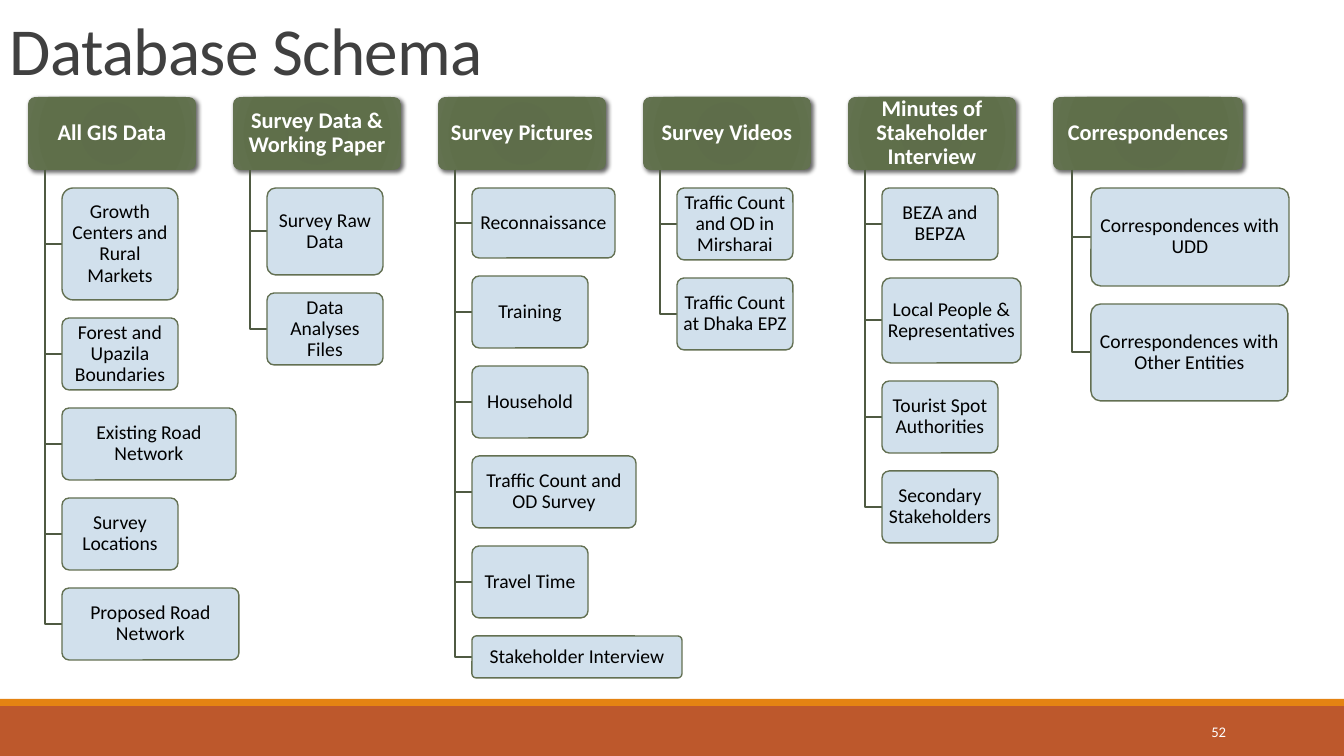
from dataclasses import dataclass

from lxml import etree
from pptx import Presentation
from pptx import util as u
from pptx.dml.color import RGBColor
from pptx.enum import shapes, text
from pptx.oxml import parse_xml
from pptx.oxml.ns import nsdecls, qn

PX = 914400 / 100.8  # EMU in one px
SLIDE_W, SLIDE_H = 1344, 756


@dataclass(frozen=True)
class Theme:
    font: str = "Calibri"
    title: str = "404040"
    light: str = "FFFFFF"
    dark: str = "000000"
    band: str = "BD582C"
    stripe: str = "E48312"
    branch: str = "4F5A42"
    entry: str = "CCDDEA"
    entry_edge: str = "637052"
    header_stops: tuple = ((0, "5D6D48"), (34, "5E6D4A"), (70, "5F6F4A"), (100, "637250"))
    title_size: float = 48
    header_size: float = 16
    entry_size: float = 14
    number_size: float = 10.5


THEME = Theme()

# Schema columns: header, header width, entries as (label, width, height)
HEADER_W, ENTRY_W, ENTRY_H = 168, 116, 72
SCHEMA = [
    ("All GIS Data", HEADER_W, [
        ("Growth Centers and Rural Markets", ENTRY_W, 112),
        ("Forest and Upazila Boundaries", ENTRY_W, ENTRY_H),
        ("Existing Road Network", 174, ENTRY_H),
        ("Survey Locations", ENTRY_W, ENTRY_H),
        ("Proposed Road Network", 177, ENTRY_H)]),
    ("Survey Data & Working Paper", HEADER_W, [
        ("Survey Raw Data", ENTRY_W, 87),
        ("Data Analyses Files", ENTRY_W, ENTRY_H)]),
    ("Survey Pictures", HEADER_W, [
        ("Reconnaissance", 143, 70),
        ("Training", ENTRY_W, ENTRY_H),
        ("Household", ENTRY_W, ENTRY_H),
        ("Traffic Count and OD Survey", 164, ENTRY_H),
        ("Travel Time", ENTRY_W, ENTRY_H),
        ("Stakeholder Interview", 210, 42)]),
    ("Survey Videos", HEADER_W, [
        ("Traffic Count and OD in Mirsharai", ENTRY_W, ENTRY_H),
        ("Traffic Count at Dhaka EPZ", ENTRY_W, ENTRY_H)]),
    ("Minutes of Stakeholder Interview", HEADER_W, [
        ("BEZA and BEPZA", ENTRY_W, ENTRY_H),
        ("Local People & Representatives", 139, 85),
        ("Tourist Spot Authorities", ENTRY_W, ENTRY_H),
        ("Secondary Stakeholders", ENTRY_W, ENTRY_H)]),
    ("Correspondences", 190, [
        ("Correspondences with UDD", 198, 98),
        ("Correspondences with Other Entities", 197, 97)]),
]


def emu(*lengths):
    return [u.Emu(round(n * PX)) for n in lengths]


def rgb(code):
    return RGBColor.from_string(code)


def write(frame, words, size, color, align, anchor, spacing=1.0, bold=False):
    frame.word_wrap = True
    frame.vertical_anchor = anchor
    line = frame.paragraphs[0]
    line.text = words
    line.alignment = align
    line.line_spacing = spacing
    line.font.name = THEME.font
    line.font.size = u.Pt(size)
    line.font.bold = bold
    line.font.color.rgb = rgb(color)
    return line


def add_bar(slide, x, y, w, h, color):
    bar = slide.shapes.add_shape(shapes.MSO_SHAPE.RECTANGLE, *emu(x, y, w, h))
    bar.shadow.inherit = False
    bar.fill.solid()
    bar.fill.fore_color.rgb = rgb(color)
    bar.line.fill.background()


def add_node(slide, x, y, w, h, label, size, color, bold=False):
    node = slide.shapes.add_shape(shapes.MSO_SHAPE.ROUNDED_RECTANGLE, *emu(x, y, w, h))
    node.adjustments[0] = 0.1
    node.shadow.inherit = False
    frame = node.text_frame
    frame.margin_left, frame.margin_right, frame.margin_top, frame.margin_bottom = emu(3, 3, 2, 2)
    write(frame, label, size, color, text.PP_ALIGN.CENTER, text.MSO_ANCHOR.MIDDLE, 0.9, bold)
    return node


def add_header(slide, x, y, w, h, label):
    header = add_node(slide, x, y, w, h, label, THEME.header_size, THEME.light, True)
    header.line.fill.background()
    header.fill.background()
    properties = header._element.spPr
    # Radial gradient
    stops = "".join(f'<a:gs pos="{at * 1000}"><a:srgbClr val="{code}"/></a:gs>'
                    for at, code in THEME.header_stops)
    gradient = parse_xml(
        f'<a:gradFill {nsdecls("a")} rotWithShape="1"><a:gsLst>{stops}</a:gsLst><a:path path="circle">'
        '<a:fillToRect l="100000" t="100000" r="100000" b="100000"/></a:path></a:gradFill>')
    properties.replace(properties.find(qn("a:noFill")), gradient)
    # Drop shadow towards the lower right
    properties.find(qn("a:effectLst")).append(parse_xml(
        f'<a:outerShdw {nsdecls("a")} blurRad="38100" dist="25400" dir="2700000" rotWithShape="0">'
        '<a:srgbClr val="000000"><a:alpha val="60000"/></a:srgbClr></a:outerShdw>'))


def add_entry(slide, x, y, w, h, label):
    entry = add_node(slide, x, y, w, h, label, THEME.entry_size, THEME.dark)
    entry.fill.solid()
    entry.fill.fore_color.rgb = rgb(THEME.entry)
    tint = entry._element.spPr.find(qn("a:solidFill")).find(qn("a:srgbClr"))
    etree.SubElement(tint, qn("a:alpha")).set("val", "90000")
    entry.line.color.rgb = rgb(THEME.entry_edge)
    entry.line.width = u.Pt(1)


def add_branch(slide, trunk_x, top, entry_x, middle):
    outline = slide.shapes.build_freeform(trunk_x, top, scale=PX)
    outline.add_line_segments([(trunk_x, middle), (entry_x, middle)], close=False)
    branch = outline.convert_to_shape()
    branch.shadow.inherit = False
    branch.fill.background()
    branch.line.color.rgb = rgb(THEME.branch)
    branch.line.width = u.Pt(1)


def add_column(slide, x, y, w, h, label, entries, gap=18):
    add_header(slide, x, y, w, h, label)
    trunk_x, entry_x = x + round(w / 10), x + round(w / 5)
    entry_y = y + h + gap
    for entry, entry_w, entry_h in entries:
        add_branch(slide, trunk_x, y + h, entry_x, entry_y + entry_h // 2)
        add_entry(slide, entry_x, entry_y, entry_w, entry_h, entry)
        entry_y += entry_h + gap


def add_schema(slide, x, y, pitch=205, header_h=73):
    for index, (label, width, entries) in enumerate(SCHEMA):
        add_column(slide, x + index * pitch, y, width, header_h, label, entries)


def add_title(slide, x, y, w, h):
    title = slide.shapes.add_textbox(*emu(x, y, w, h))
    line = write(title.text_frame, "Database Schema", THEME.title_size, THEME.title,
                 text.PP_ALIGN.LEFT, text.MSO_ANCHOR.BOTTOM, 0.85)
    line.runs[0].font._element.set("spc", "-50")


def add_footer(slide, x, y, w, h):
    stripe_h = 7
    add_bar(slide, x, y + stripe_h, w, h - stripe_h, THEME.band)
    add_bar(slide, x, y, w, stripe_h, THEME.stripe)
    number = slide.shapes.add_textbox(*emu(x + 1092, y + 13, 144, 40))
    write(number.text_frame, "52", THEME.number_size, THEME.light,
          text.PP_ALIGN.RIGHT, text.MSO_ANCHOR.MIDDLE)


def main():
    deck = Presentation()
    deck.slide_width, deck.slide_height = emu(SLIDE_W, SLIDE_H)
    slide = deck.slides.add_slide(deck.slide_layouts[6])
    add_footer(slide, 0, 699, SLIDE_W, SLIDE_H - 699)
    add_title(slide, 0, 0, 1109, 94)
    add_schema(slide, 28, 97)
    deck.save("out.pptx")


if __name__ == "__main__":
    main()
